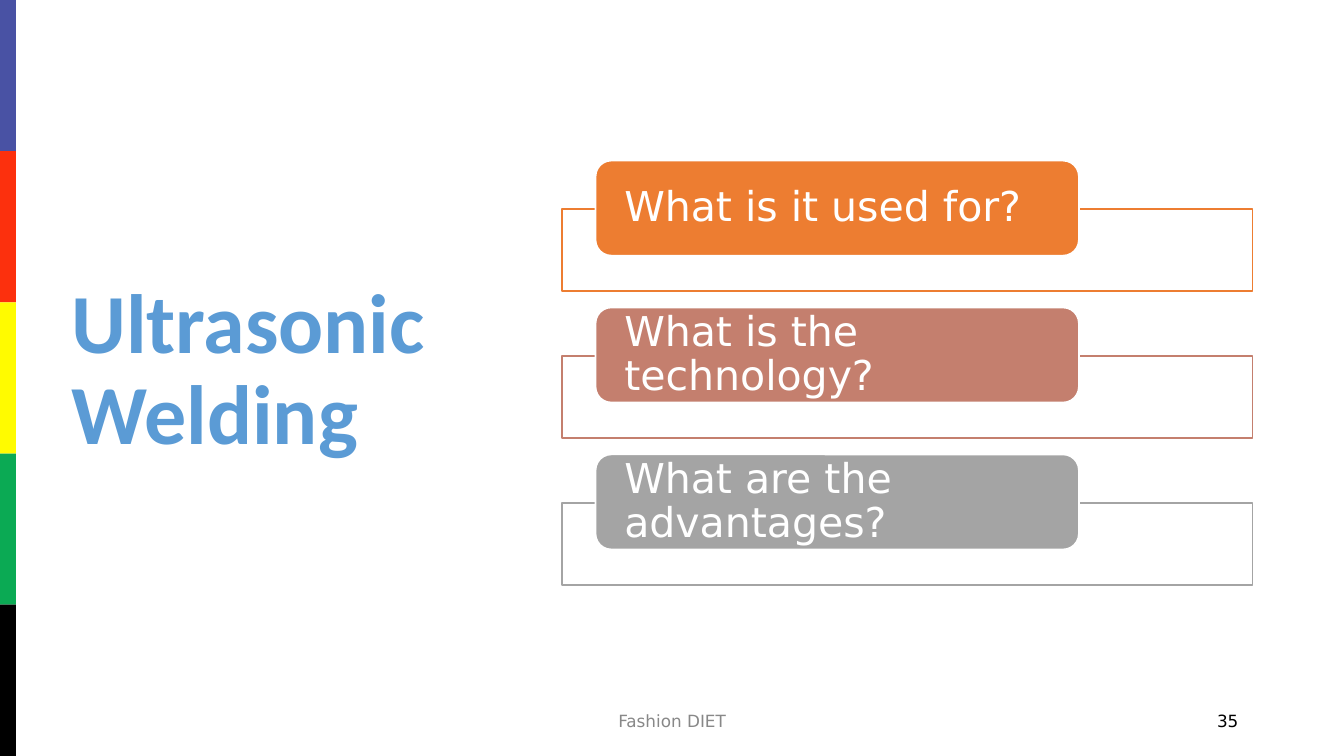
from dataclasses import dataclass

from lxml import etree
from pptx import Presentation
from pptx.dml.color import RGBColor
from pptx.enum import shapes, text
from pptx.oxml import ns
from pptx.util import Pt

LEFT, MID, RIGHT = text.PP_ALIGN.LEFT, text.PP_ALIGN.CENTER, text.PP_ALIGN.RIGHT


@dataclass(frozen=True)
class Theme:
    head: str = "5B9BD5"
    foot: str = "888888"
    black: str = "000000"
    white: str = "FFFFFF"
    bands: tuple = ("4952A4", "FC300D", "FFFB00", "0BAA54", "000000")
    cards: tuple = ("ED7D31", "C47F6E", "A4A4A4")
    head_font: str = "Calibri"
    body_font: str = "DejaVu Sans"
    head_size: float = 45
    card_size: float = 22
    foot_size: float = 9


def write(frame, words, *, size, color, font, bold=False, align=LEFT,
          space=1.0, inset=(7.2, 3.6)):
    frame.word_wrap = True
    frame.auto_size = text.MSO_AUTO_SIZE.NONE
    frame.vertical_anchor = text.MSO_ANCHOR.MIDDLE
    frame.margin_left = frame.margin_right = Pt(inset[0])
    frame.margin_top = frame.margin_bottom = Pt(inset[1])
    para = frame.paragraphs[0]
    para.alignment = align
    para.line_spacing = space
    run = para.add_run()
    run.text = words
    run.font.size = Pt(size)
    run.font.name = font
    run.font.bold = bold
    run.font.color.rgb = RGBColor.from_string(color)


class Deck:
    def __init__(self, theme, wide, high):
        self.theme = theme
        self.show = Presentation()
        self.show.slide_width, self.show.slide_height = Pt(wide), Pt(high)
        self.slide = self.show.slides.add_slide(self.show.slide_layouts[5])

    def title(self, words, x, y, w, h):
        box = self.slide.shapes.title
        box.left, box.top, box.width, box.height = map(Pt, (x, y, w, h))
        write(box.text_frame, words, size=self.theme.head_size, color=self.theme.head,
              font=self.theme.head_font, bold=True, space=0.9)

    def block(self, x, y, w, h, fill, line=None, kind=shapes.MSO_SHAPE.RECTANGLE,
              alpha=None):
        shape = self.slide.shapes.add_shape(kind, *map(Pt, (x, y, w, h)))
        shape.shadow.inherit = False
        shape.fill.solid()
        shape.fill.fore_color.rgb = RGBColor.from_string(fill)
        if alpha is not None:
            tint = shape.fill._xPr.find(".//" + ns.qn("a:srgbClr"))
            etree.SubElement(tint, ns.qn("a:alpha")).set("val", str(alpha * 1000))
        if line:
            shape.line.color.rgb = RGBColor.from_string(line)
            shape.line.width = Pt(1)
        else:
            shape.line.fill.background()
        return shape

    def card(self, words, x, y, color):
        white = self.theme.white
        self.block(x, y + 26, 370, 44, white, line=color, alpha=90)
        label = self.block(x + 18, y, 259, 51, color, line=white,
                           kind=shapes.MSO_SHAPE.ROUNDED_RECTANGLE)
        write(label.text_frame, words, size=self.theme.card_size, color=white,
              font=self.theme.body_font, space=0.9, inset=(13, 0))

    def note(self, words, x, y, w, h, color, align):
        box = self.slide.shapes.add_textbox(*map(Pt, (x, y, w, h)))
        write(box.text_frame, words, size=self.theme.foot_size, color=color,
              font=self.theme.body_font, align=align)


def main():
    theme = Theme()
    wide, high = 720, 405
    deck = Deck(theme, wide, high)

    step = high / len(theme.bands)
    for row, color in enumerate(theme.bands):
        deck.block(0, row * step, 8.5, step, color)

    deck.title("Ultrasonic Welding", 31, 36.5, 225, 325)

    asks = ("What is it used for?", "What is the technology?", "What are the advantages?")
    for row, (words, color) in enumerate(zip(asks, theme.cards)):
        deck.card(words, 301, 86 + row * 78.7, color)

    deck.note("Fashion DIET", 238.5, 375.4, 243, 21.6, theme.foot, MID)
    deck.note("35", 508.5, 375.4, 162, 21.6, theme.black, RIGHT)
    deck.show.save("out.pptx")


if __name__ == "__main__":
    main()
